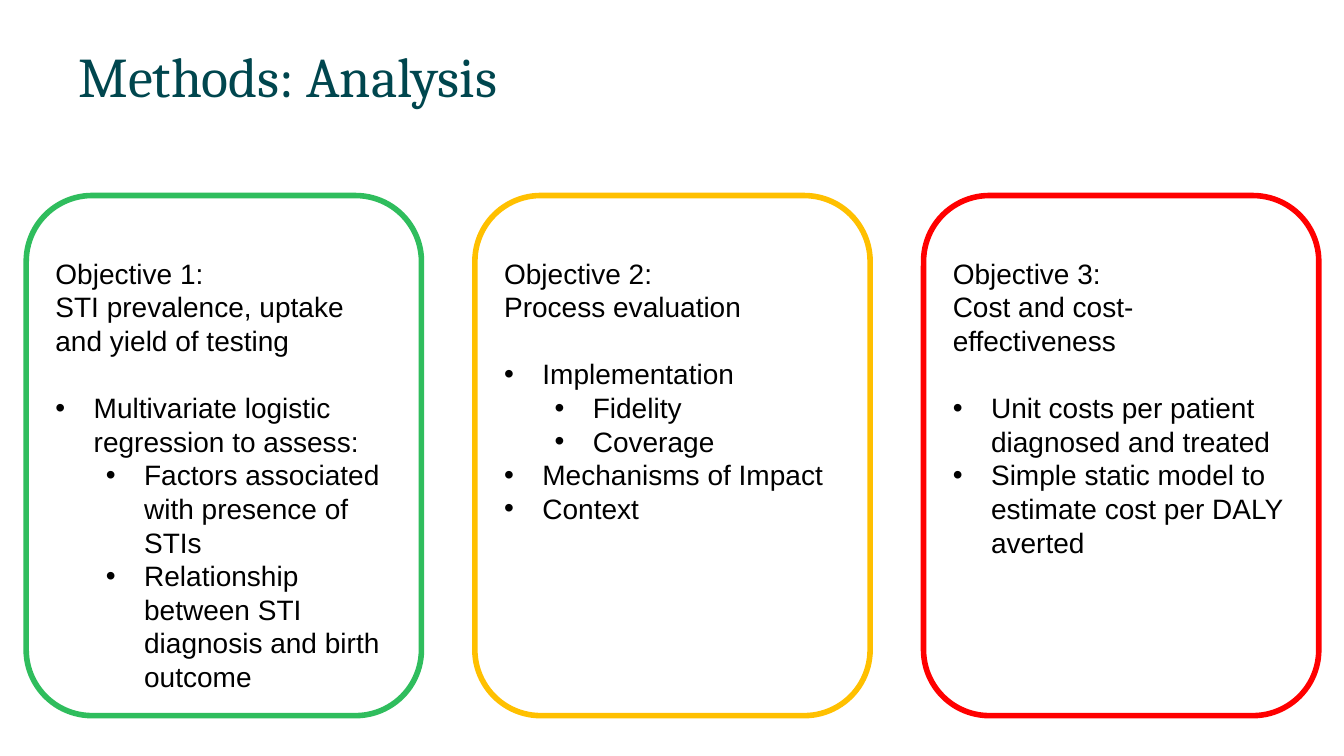
"""Build the slide on analysis methods for the three objectives."""
from dataclasses import dataclass

from lxml.etree import SubElement
from pptx import Presentation
from pptx.dml.color import RGBColor
from pptx.enum.shapes import MSO_SHAPE
from pptx.enum.text import MSO_ANCHOR, PP_ALIGN
from pptx.oxml.ns import qn
from pptx.util import Inches, Pt

COLORS = {
    "title": "00464E",
    "text": "000000",
    "card": "FFFFFF",
    "green": "2FBD5D",
    "amber": "FFC000",
    "red": "FF0000",
}


@dataclass
class Bullet:
    text: str
    level: int = 0


@dataclass
class Objective:
    heading: str
    topic: str
    color: str
    bullets: list[Bullet]


OBJECTIVES = [
    Objective("Objective 1:", "STI prevalence, uptake and yield of testing", "green", [
        Bullet("Multivariate logistic regression to assess:"),
        Bullet("Factors associated with presence of STIs", 1),
        Bullet("Relationship between STI diagnosis and birth outcome", 1),
    ]),
    Objective("Objective 2:", "Process evaluation", "amber", [
        Bullet("Implementation"),
        Bullet("Fidelity", 1),
        Bullet("Coverage", 1),
        Bullet("Mechanisms of Impact"),
        Bullet("Context"),
    ]),
    Objective("Objective 3:", "Cost and cost-effectiveness", "red", [
        Bullet("Unit costs per patient diagnosed and treated"),
        Bullet("Simple static model to estimate cost per DALY averted"),
    ]),
]

CARD_LEFT, CARD_TOP, CARD_PITCH = 0.26, 1.94, 4.45
CARD_WIDTH, CARD_HEIGHT = 3.92, 5.16


def rgb(name: str) -> RGBColor:
    return RGBColor.from_string(COLORS[name])


def write(p, text: str, font: str, size: int, color: str) -> None:
    p.text = text
    p.alignment = PP_ALIGN.LEFT
    for r in p.runs:
        r.font.name = font
        r.font.size = Pt(size)
        r.font.color.rgb = rgb(color)


def set_bullet(p, level: int) -> None:
    p.level = level
    pPr = p._p.get_or_add_pPr()
    pPr.set("marL", str(Inches(0.38 + 0.5 * level)))
    pPr.set("indent", str(Inches(-0.38)))
    SubElement(pPr, qn("a:buFont"), typeface="Arial")
    SubElement(pPr, qn("a:buChar"), char="•")


def add_title(slide, text: str) -> None:
    sp = slide.shapes.add_textbox(Inches(0.68), Inches(0.4), Inches(11.73), Inches(0.77))
    tf = sp.text_frame
    tf.word_wrap = True
    tf.vertical_anchor = MSO_ANCHOR.MIDDLE
    p = tf.paragraphs[0]
    p.line_spacing = 0.9
    write(p, text, "Cambria", 40, "title")


def add_card(slide, left: float, objective: Objective) -> None:
    sp = slide.shapes.add_shape(
        MSO_SHAPE.ROUNDED_RECTANGLE,
        Inches(left), Inches(CARD_TOP), Inches(CARD_WIDTH), Inches(CARD_HEIGHT),
    )
    sp.shadow.inherit = False
    sp.fill.solid()
    sp.fill.fore_color.rgb = rgb("card")
    sp.line.color.rgb = rgb(objective.color)
    sp.line.width = Pt(4)
    tf = sp.text_frame
    tf.word_wrap = True
    tf.vertical_anchor = MSO_ANCHOR.TOP
    tf.margin_top, tf.margin_bottom = Inches(0.41), Inches(0)
    write(tf.paragraphs[0], objective.heading, "Arial", 20, "text")
    write(tf.add_paragraph(), objective.topic, "Arial", 20, "text")
    for i, bullet in enumerate(objective.bullets):
        p = tf.add_paragraph()
        if i == 0:
            p.space_before = Pt(24)
        set_bullet(p, bullet.level)
        write(p, bullet.text, "Arial", 20, "text")


def main() -> None:
    prs = Presentation()
    prs.slide_width, prs.slide_height = Inches(13.33), Inches(7.5)
    slide = prs.slides.add_slide(prs.slide_layouts[6])
    add_title(slide, "Methods: Analysis")
    for i, objective in enumerate(OBJECTIVES):
        add_card(slide, CARD_LEFT + i * CARD_PITCH, objective)
    prs.save("out.pptx")


if __name__ == "__main__":
    main()
